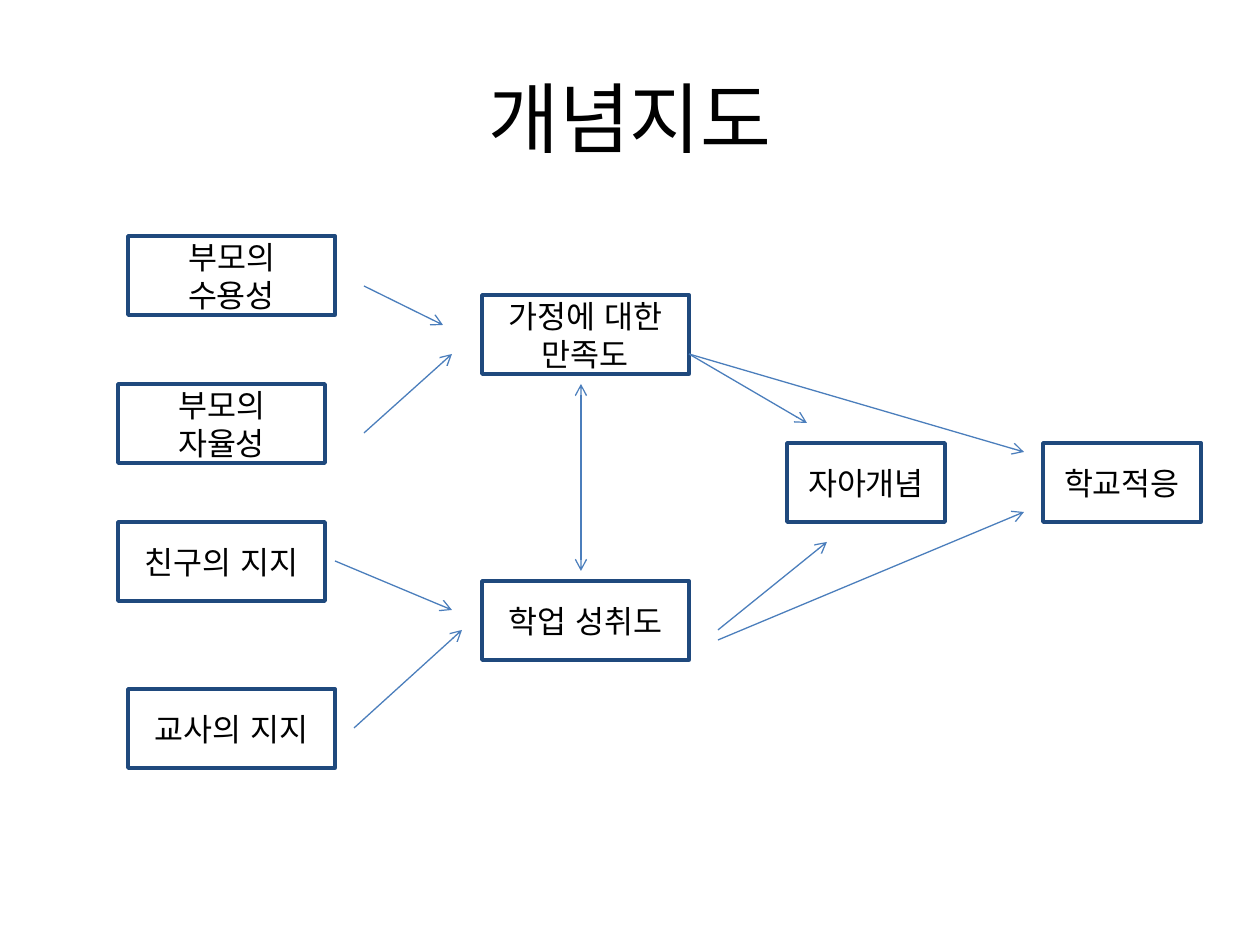
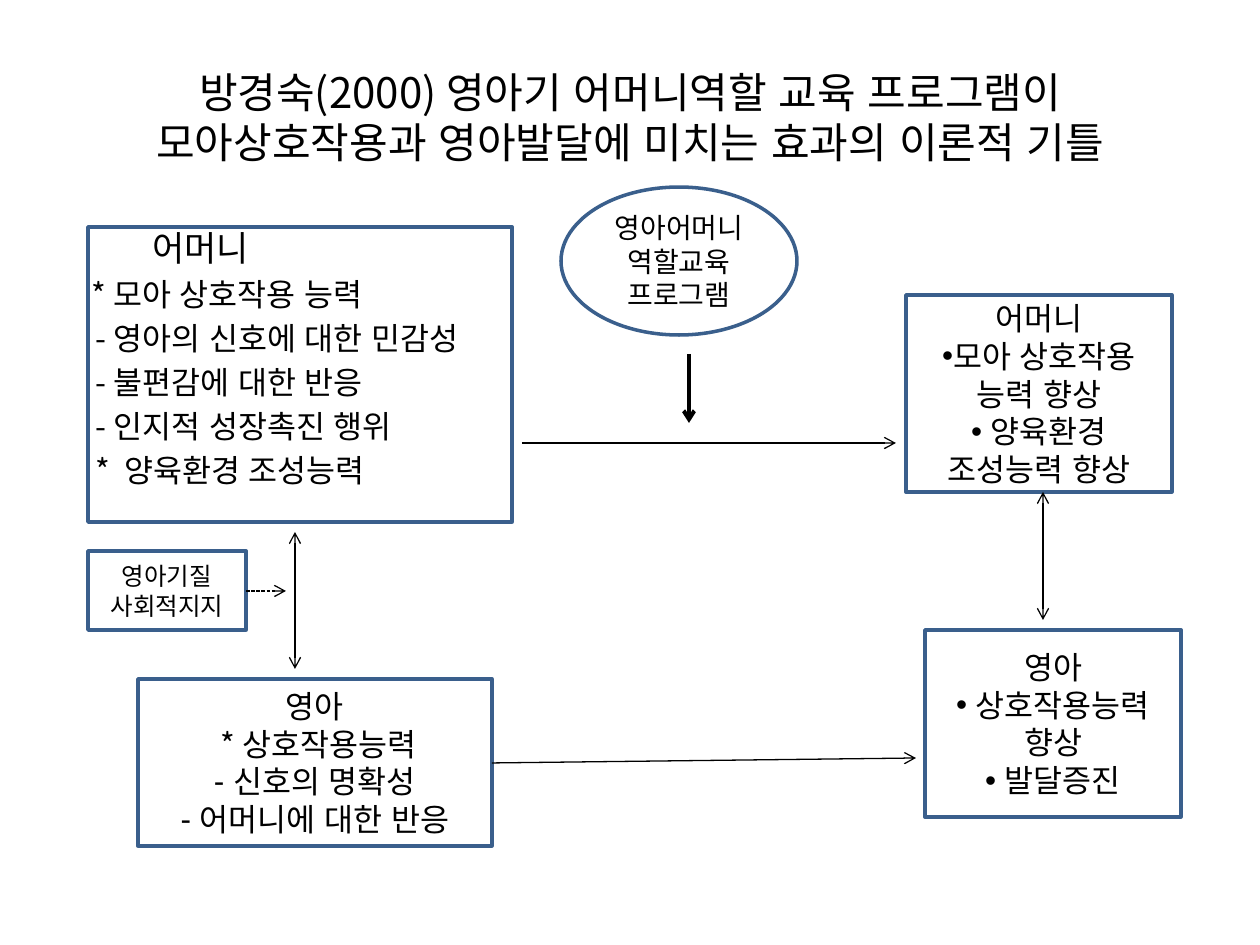
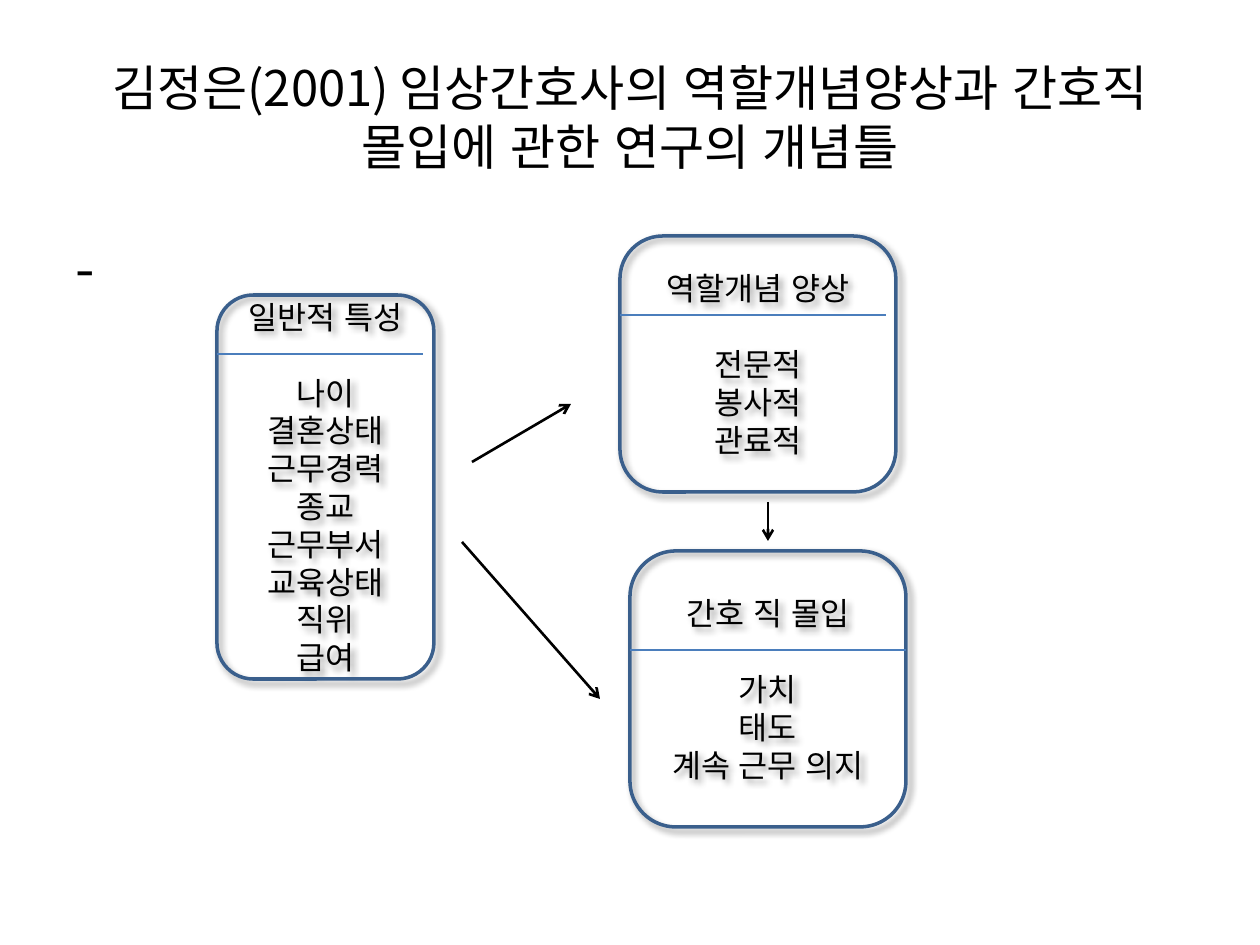
from typing import NamedTuple

from lxml import etree
from pptx import Presentation
from pptx.dml.color import RGBColor
from pptx.enum.dml import MSO_LINE
from pptx.enum.lang import MSO_LANGUAGE_ID
from pptx.enum.shapes import MSO_CONNECTOR, MSO_SHAPE
from pptx.enum.text import MSO_ANCHOR, PP_ALIGN
from pptx.oxml.ns import qn
from pptx.util import Pt

PX = 914400 // 126
RECT, ROUNDED, OVAL = MSO_SHAPE.RECTANGLE, MSO_SHAPE.ROUNDED_RECTANGLE, MSO_SHAPE.OVAL
CENTER, LEFT = PP_ALIGN.CENTER, PP_ALIGN.LEFT
MIDDLE, TOP = MSO_ANCHOR.MIDDLE, MSO_ANCHOR.TOP
STRAIGHT = MSO_CONNECTOR.STRAIGHT
DASHED = MSO_LINE.SQUARE_DOT
KOREAN = MSO_LANGUAGE_ID.KOREAN


class Theme:
    font = "Noto Sans CJK KR"
    black = RGBColor(0, 0, 0)
    white = RGBColor(0xFF, 0xFF, 0xFF)
    navy = RGBColor(0x1F, 0x49, 0x7D)
    steel = RGBColor(0x3A, 0x5F, 0x8C)
    blue = RGBColor(0x4B, 0x7E, 0xBC)
    title, subtitle, long_title = 44, 28, 24
    dash, heading, body, oval, small = 32, 20, 18, 16, 14
    leading = 1.2
    border, thin, medium, thick = 2, 0.75, 1.5, 2.25


class Para(NamedTuple):
    text: str
    size: int = Theme.body
    bullet: str = ""
    before: float = 0
    left: int = 0


def add_block(page, frame, paras, kind=None, border=Theme.steel, fill=None,
              align=CENTER, anchor=MIDDLE):
    """Add an outlined shape of the given kind, or a text box if there is none."""
    area = [n * PX for n in frame]
    if kind is None:
        box = page.shapes.add_textbox(*area)
    else:
        box = page.shapes.add_shape(kind, *area)
        box.shadow.inherit = False
        box.line.color.rgb = border
        box.line.width = Pt(Theme.border)
        if fill is None:
            box.fill.background()
        else:
            box.fill.solid()
            box.fill.fore_color.rgb = fill
    text_frame = box.text_frame
    text_frame.word_wrap = True
    text_frame.vertical_anchor = anchor
    for index, item in enumerate(paras):
        para = text_frame.add_paragraph() if index else text_frame.paragraphs[0]
        para.alignment = align
        para.line_spacing = Pt(item.size * Theme.leading)
        para.space_before = Pt(item.before)
        props = para._p.get_or_add_pPr()
        props.set("marL", str(item.left * PX))
        props.set("indent", "0")
        if item.bullet:
            etree.SubElement(props, qn("a:buFont"), typeface="Arial")
            etree.SubElement(props, qn("a:buChar"), char=item.bullet)
        span = para.add_run()
        span.text = item.text
        span.font.size = Pt(item.size)
        span.font.color.rgb = Theme.black
        span.font.name = Theme.font
        span.font.language_id = KOREAN
        etree.SubElement(span._r.get_or_add_rPr(), qn("a:ea"), typeface=Theme.font)
    return box


def add_line(page, ends, color=Theme.black, width=Theme.thin, arrows=("tailEnd",), dash=None):
    line = page.shapes.add_connector(STRAIGHT, *[n * PX for n in ends])
    line.line.color.rgb = color
    line.line.width = Pt(width)
    if dash:
        line.line.dash_style = dash
    outline = line.line._get_or_add_ln()
    for end in arrows:
        etree.SubElement(outline, qn(f"a:{end}"), type="arrow")
    etree.SubElement(line._element.spPr, qn("a:effectLst"))


BOTH = ("headEnd", "tailEnd")

deck = Presentation()
deck.slide_width, deck.slide_height = 1260 * PX, 945 * PX

# Titles
pages = []
for title, size in [
    ("개념지도", Theme.title),
    ("방경숙(2000) 영아기 어머니역할 교육 프로그램이 모아상호작용과 영아발달에 "
     "미치는 효과의 이론적 기틀", Theme.long_title),
    ("김정은(2001) 임상간호사의 역할개념양상과 간호직 몰입에 관한 연구의 개념틀",
     Theme.subtitle),
]:
    page = deck.slides.add_slide(deck.slide_layouts[6])
    add_block(page, (63, 38, 1134, 157), [Para(title, size)])
    pages.append(page)
concept_map, mother_program, nurse_roles = pages

# Slide 1: concept map
for label, left, top, width in [
    ("부모의 수용성", 128, 236, 207),
    ("부모의 자율성", 118, 384, 207),
    ("친구의 지지", 118, 522, 207),
    ("교사의 지지", 128, 689, 207),
    ("가정에 대한 만족도", 482, 295, 207),
    ("학업 성취도", 482, 581, 207),
    ("자아개념", 787, 443, 158),
    ("학교적응", 1043, 443, 158),
]:
    add_block(concept_map, (left, top, width, 79), [Para(label)], RECT, Theme.navy, Theme.white)

for ends in [
    (364, 286, 443, 325), (364, 433, 452, 354),
    (335, 561, 452, 610), (354, 728, 462, 630),
    (689, 354, 807, 423), (689, 354, 1024, 452),
    (718, 630, 827, 542), (718, 640, 1024, 512),
]:
    add_line(concept_map, ends, Theme.blue)
add_line(concept_map, (581, 384, 581, 571), Theme.blue, arrows=BOTH)

# Slide 2: mother role programme
abilities = [Para("어머니", Theme.heading, left=77)]
for text, left in [
    ("* 모아 상호작용 능력", 16),
    ("- 영아의 신호에 대한 민감성", 20),
    ("- 불편감에 대한 반응", 20),
    ("- 인지적 성장촉진 행위", 20),
    ("*  양육환경 조성능력", 20),
]:
    abilities.append(Para(text, before=Theme.body * 0.2, left=left))
add_block(mother_program, (63, 220, 1134, 624), abilities, align=LEFT, anchor=TOP)

for kind, frame, paras in [
    (RECT, (88, 227, 424, 295), []),
    (RECT, (88, 551, 158, 79),
     [Para("영아기질", Theme.small), Para("사회적지지", Theme.small)]),
    (RECT, (138, 679, 354, 167),
     [Para("영아"), Para(" * 상호작용능력"), Para(" 신호의 명확성", bullet="-"),
      Para(" 어머니에 대한 반응", bullet="-")]),
    (RECT, (906, 295, 266, 197),
     [Para("어머니"), Para("모아 상호작용 능력 향상", bullet="•"),
      Para(" 양육환경 조성능력 향상", bullet="•")]),
    (RECT, (925, 630, 256, 187),
     [Para("영아"), Para(" 상호작용능력 향상", bullet="•"), Para(" 발달증진", bullet="•")]),
    (OVAL, (561, 187, 236, 148),
     [Para(text, Theme.oval) for text in ("영아어머니", "역할교육", "프로그램")]),
]:
    add_block(mother_program, frame, paras, kind)

for ends in [(295, 532, 295, 669), (1043, 492, 1043, 620)]:
    add_line(mother_program, ends, arrows=BOTH)
for ends in [(522, 443, 896, 443), (492, 763, 916, 758)]:
    add_line(mother_program, ends)
add_line(mother_program, (246, 591, 286, 591), dash=DASHED)
add_line(mother_program, (689, 354, 689, 423), width=Theme.thick)

# Slide 3: nurse role concepts
add_block(nurse_roles, (63, 227, 1134, 617), [Para("-", Theme.dash)], align=LEFT, anchor=TOP)

for frame, heading, items, rule in [
    ((217, 295, 217, 384), "일반적 특성",
     ("나이", "결혼상태", "근무경력", "종교", "근무부서", "교육상태", "직위", "급여"),
     (217, 354, 423, 354)),
    ((620, 236, 276, 256), "역할개념 양상", ("전문적", "봉사적", "관료적"),
     (620, 315, 886, 315)),
    ((630, 551, 276, 276), "간호 직 몰입", ("가치", "태도", "계속 근무 의지"),
     (630, 650, 906, 650)),
]:
    first, *rest = items
    paras = [Para(heading), Para(first, before=Theme.body * Theme.leading)]
    paras += [Para(item) for item in rest]
    card = add_block(nurse_roles, frame, paras, ROUNDED)
    effects = card._element.spPr.find(qn("a:effectLst"))
    shadow = etree.SubElement(effects, qn("a:outerShdw"), blurRad=str(Pt(4)),
                              dist=str(Pt(3)), dir="2700000", rotWithShape="0")
    shade = etree.SubElement(shadow, qn("a:srgbClr"), val=str(Theme.black))
    etree.SubElement(shade, qn("a:alpha"), val="40000")
    add_line(nurse_roles, rule, Theme.blue, arrows=())

for ends in [(472, 462, 571, 404), (462, 542, 600, 699), (768, 502, 768, 541)]:
    add_line(nurse_roles, ends, width=Theme.medium)

deck.save("out.pptx")
